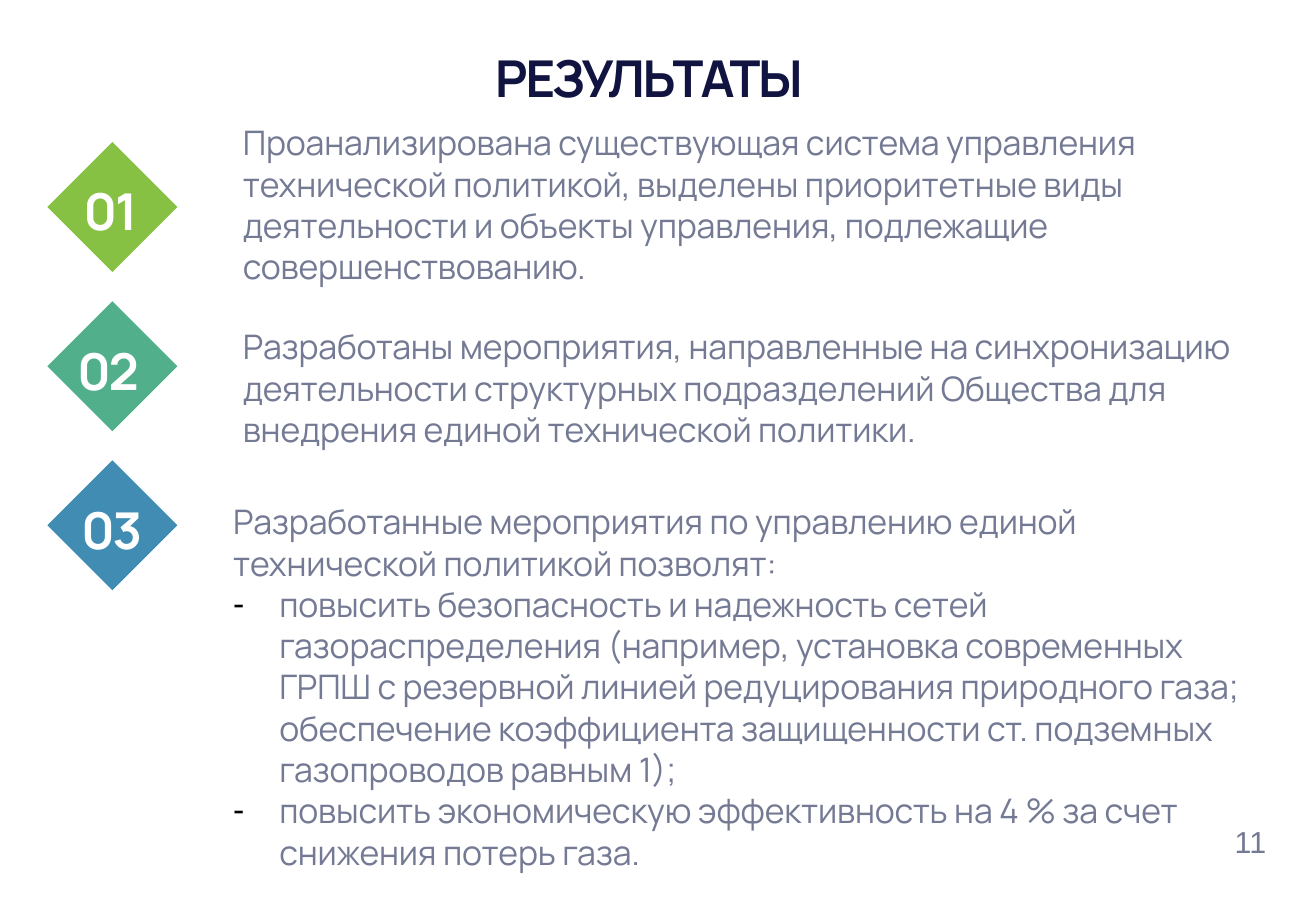
from lxml import etree
from pptx import Presentation, util as u
from pptx.dml.color import RGBColor
from pptx.enum import shapes, text
from pptx.oxml import ns

NAVY = RGBColor(0x11, 0x13, 0x40)
SLATE = RGBColor(0x74, 0x79, 0x94)
WHITE = RGBColor(0xFF, 0xFF, 0xFF)
GREEN = RGBColor(0x87, 0xC1, 0x43)
TEAL = RGBColor(0x51, 0xAF, 0x8B)
BLUE = RGBColor(0x40, 0x8C, 0xB3)

HEADING = "РЕЗУЛЬТАТЫ"
PAGE = "11"
RESULTS = [
    {"number": "01", "color": GREEN, "center": 0.91, "box": (1.9, 0.95, 1.46),
     "lead": "Проанализирована существующая система управления технической политикой, "
             "выделены приоритетные виды деятельности и объекты управления, "
             "подлежащие совершенствованию.",
     "points": []},
    {"number": "02", "color": TEAL, "center": 0.89, "box": (1.9, 2.63, 1.12),
     "lead": "Разработаны мероприятия, направленные на синхронизацию деятельности "
             "структурных подразделений Общества для внедрения единой технической политики.",
     "points": []},
    {"number": "03", "color": BLUE, "center": 0.92, "box": (1.82, 4.07, 2.85),
     "lead": "Разработанные мероприятия по управлению единой технической политикой позволят:",
     "points": [
         "повысить безопасность и надежность сетей газораспределения (например, "
         "установка современных ГРПШ с резервной линией редуцирования природного газа; "
         "обеспечение коэффициента защищенности ст. подземных газопроводов равным 1);",
         "повысить экономическую эффективность на 4 % за счет снижения потерь газа."]},
]

WIDTH, HEIGHT = 10.83, 7.5
TEXT_RIGHT = 10.51
DIAMOND = 1.07
DIAMOND_LEFT, DIAMOND_TOP, DIAMOND_STEP = 0.39, 1.17, 1.31
LABEL_WIDTH, LABEL_HEIGHT = 0.8, 0.63
HANG = 0.38


def inches(*lengths):
    return [u.Inches(length) for length in lengths]


def style(paragraph, size, color, bold=False, font="Manrope", tracking=0, spacing=None):
    paragraph.line_spacing = spacing
    for run in paragraph.runs:
        run.font.size = u.Pt(size)
        run.font.name = font
        run.font.bold = bold
        run.font.color.rgb = color
        run._r.get_or_add_rPr().set("spc", str(tracking))


def set_display(frame, words, color, anchor):
    frame.text = words
    frame.word_wrap = True
    frame.auto_size = text.MSO_AUTO_SIZE.SHAPE_TO_FIT_TEXT
    frame.vertical_anchor = anchor
    line = frame.paragraphs[0]
    line.alignment = text.PP_ALIGN.CENTER
    style(line, 30.1, color, bold=True, tracking=-120, spacing=u.Pt(38.2))


def add_dash(paragraph):
    props = paragraph._p.get_or_add_pPr()
    props.set("marL", str(u.Inches(HANG)))
    props.set("indent", str(-u.Inches(HANG)))
    tint = etree.SubElement(props, ns.qn("a:buClr"))
    etree.SubElement(tint, ns.qn("a:srgbClr")).set("val", "000000")
    etree.SubElement(props, ns.qn("a:buFont")).set("typeface", "Arial")
    etree.SubElement(props, ns.qn("a:buChar")).set("char", "-")


def add_result(slide, index, result):
    top = DIAMOND_TOP + index * DIAMOND_STEP
    diamond = slide.shapes.add_shape(
        shapes.MSO_SHAPE.DIAMOND, *inches(DIAMOND_LEFT, top, DIAMOND, DIAMOND))
    diamond.shadow.inherit = False
    diamond.fill.solid()
    diamond.fill.fore_color.rgb = result["color"]
    diamond.line.fill.background()

    label = slide.shapes.add_textbox(*inches(
        result["center"] - LABEL_WIDTH / 2, top + (DIAMOND + 0.03 - LABEL_HEIGHT) / 2,
        LABEL_WIDTH, LABEL_HEIGHT))
    set_display(label.text_frame, result["number"], WHITE, text.MSO_ANCHOR.MIDDLE)

    left, body_top, height = result["box"]
    body = slide.shapes.add_textbox(*inches(left, body_top, TEXT_RIGHT - left, height)).text_frame
    body.word_wrap = True
    body.auto_size = text.MSO_AUTO_SIZE.SHAPE_TO_FIT_TEXT
    body.text = "\n".join([result["lead"], *result["points"]])
    for position, paragraph in enumerate(body.paragraphs):
        style(paragraph, 20, SLATE, tracking=-10, spacing=1.02)
        if position:
            add_dash(paragraph)


def main():
    deck = Presentation()
    deck.slide_width, deck.slide_height = inches(WIDTH, HEIGHT)
    slide = deck.slides.add_slide(deck.slide_layouts[5])

    title = slide.shapes.title
    title.left, title.top, title.width, title.height = inches(0.6, 0.31, 9.48, 0.63)
    set_display(title.text_frame, HEADING, NAVY, text.MSO_ANCHOR.BOTTOM)

    for index, result in enumerate(RESULTS):
        add_result(slide, index, result)

    page = slide.shapes.add_textbox(*inches(9.82, 6.8, 0.68, 0.32)).text_frame
    page.margin_left = page.margin_right = u.Inches(0.08)
    page.margin_top = page.margin_bottom = u.Inches(0.04)
    page.vertical_anchor = text.MSO_ANCHOR.BOTTOM
    page.word_wrap = True
    page.text = PAGE
    page.paragraphs[0].alignment = text.PP_ALIGN.RIGHT
    style(page.paragraphs[0], 18, SLATE, font="Arial")

    deck.save("out.pptx")


if __name__ == "__main__":
    main()
